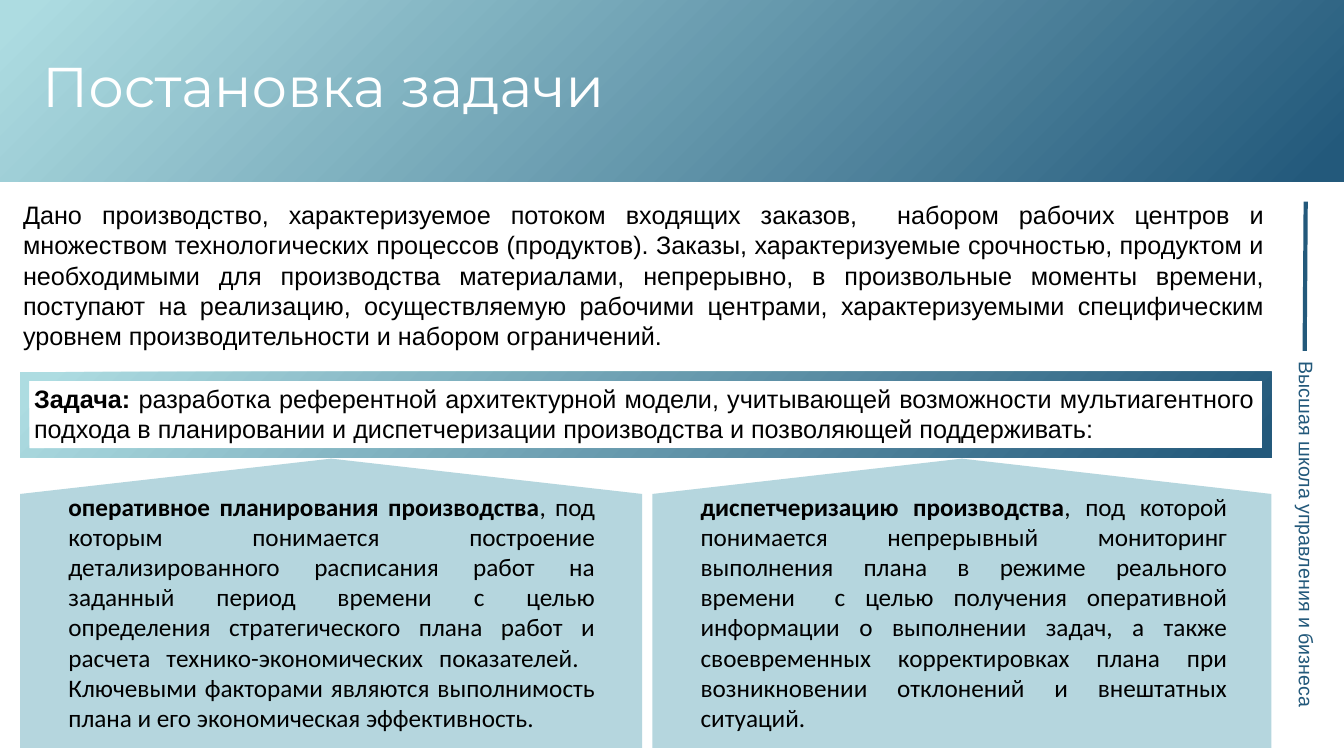
"""Builds the problem statement slide with its two supporting goals."""
from dataclasses import dataclass

from lxml.etree import SubElement
from pptx import Presentation
from pptx.dml.color import RGBColor
from pptx.enum.shapes import MSO_CONNECTOR, MSO_SHAPE
from pptx.enum.text import MSO_ANCHOR, MSO_AUTO_SIZE, PP_ALIGN
from pptx.oxml.ns import qn
from pptx.util import Inches, Pt

TITLE = "Постановка задачи"
SCHOOL = "Высшая школа управления и бизнеса"
GIVEN = (
    "Дано производство, характеризуемое потоком входящих заказов,  набором рабочих центров "
    "и множеством технологических процессов (продуктов). Заказы, характеризуемые срочностью, "
    "продуктом и необходимыми для производства материалами, непрерывно, в произвольные моменты "
    "времени, поступают на реализацию, осуществляемую рабочими центрами, характеризуемыми "
    "специфическим уровнем производительности и набором ограничений."
)
TASK = (
    "Задача: ",
    "разработка референтной архитектурной модели, учитывающей возможности мультиагентного "
    "подхода в планировании и диспетчеризации производства и позволяющей поддерживать:",
)
GOALS = [
    {
        "panel": (0.2, 6.17),
        "text_left": 0.58,
        "lead": "оперативное планирования производства",
        "body": ", под которым понимается построение детализированного расписания работ на "
        "заданный период времени с целью определения стратегического плана работ и расчета "
        "технико-экономических показателей.  Ключевыми факторами являются выполнимость плана "
        "и его экономическая эффективность.",
    },
    {
        "panel": (6.47, 6.14),
        "text_left": 6.85,
        "lead": "диспетчеризацию производства",
        "body": ", под которой понимается непрерывный мониторинг выполнения плана в режиме "
        "реального времени  с целью получения оперативной информации о выполнении задач, а "
        "также своевременных корректировках плана при возникновении отклонений и внештатных "
        "ситуаций.",
    },
]
PANEL_TOP, PANEL_HEIGHT = 4.55, 2.87
GOAL_TEXT_TOP, GOAL_TEXT_WIDTH, GOAL_TEXT_HEIGHT = 4.82, 5.42, 2.52


@dataclass(frozen=True)
class Theme:
    dark: RGBColor = RGBColor.from_string("23597B")
    light: RGBColor = RGBColor.from_string("ADDCE1")
    panel: RGBColor = RGBColor.from_string("96C6D0")
    white: RGBColor = RGBColor.from_string("FFFFFF")
    black: RGBColor = RGBColor.from_string("000000")
    panel_alpha: int = 70
    title_size: int = 40
    body_size: int = 18
    school_size: int = 14
    rule_width: int = 3


THEME = Theme()
TITLE_FONT = {"name": "Montserrat", "size": Pt(THEME.title_size), "color": THEME.white}
BODY_FONT = {"name": "Arial", "size": Pt(THEME.body_size), "color": THEME.black}
GOAL_FONT = BODY_FONT | {"name": "Calibri"}
SCHOOL_FONT = {"name": "Arial", "size": Pt(THEME.school_size), "color": THEME.dark}


def add_plain_shape(slide, preset, box):
    shape = slide.shapes.add_shape(preset, *map(Inches, box))
    shape.shadow.inherit = False
    shape.line.fill.background()
    return shape


def fill_solid(shape, color, alpha=100):
    shape.fill.solid()
    shape.fill.fore_color.rgb = color
    if alpha < 100:
        color_node = shape.fill._xPr.find(qn("a:solidFill"))[0]
        SubElement(color_node, qn("a:alpha"), val=str(alpha * 1000))


def fill_diagonal(shape):
    shape.fill.gradient()
    shape.fill.gradient_angle = 315
    stops = [(0.02, THEME.light), (0.98, THEME.dark)]
    for stop, (position, color) in zip(shape.fill.gradient_stops, stops):
        stop.position = position
        stop.color.rgb = color


def write(shape, runs, font, align):
    frame = shape.text_frame
    frame.word_wrap = True
    paragraph = frame.paragraphs[0]
    paragraph.alignment = align
    for text, bold in runs:
        run = paragraph.add_run()
        run.text = text
        for attribute, value in (font | {"bold": bold}).items():
            if attribute == "color":
                run.font.color.rgb = value
            else:
                setattr(run.font, attribute, value)


def add_text(slide, box, runs, font, align=PP_ALIGN.JUSTIFY):
    text_box = slide.shapes.add_textbox(*map(Inches, box))
    write(text_box, runs, font, align)
    text_box.text_frame.auto_size = MSO_AUTO_SIZE.SHAPE_TO_FIT_TEXT


def add_goal_panel(slide, left, width):
    center_x, center_y = left + width / 2, PANEL_TOP + PANEL_HEIGHT / 2
    box = (center_x - PANEL_HEIGHT / 2, center_y - width / 2, PANEL_HEIGHT, width)
    panel = add_plain_shape(slide, MSO_SHAPE.PENTAGON, box)
    panel.rotation = 270
    panel.adjustments[0] = 0.122
    fill_solid(panel, THEME.panel, THEME.panel_alpha)


def add_school_strip(slide):
    ends = map(Inches, (12.95, 2, 12.94, 3.48))
    rule = slide.shapes.add_connector(MSO_CONNECTOR.STRAIGHT, *ends)
    rule.line.color.rgb = THEME.dark
    rule.line.width = Pt(THEME.rule_width)
    SubElement(rule._element.spPr, qn("a:effectLst"))
    label = add_plain_shape(slide, MSO_SHAPE.RECTANGLE, (11.1, 5.18, 3.72, 0.34))
    label.rotation = 90
    fill_solid(label, THEME.white)
    write(label, [(SCHOOL, False)], SCHOOL_FONT, PP_ALIGN.LEFT)
    label.text_frame.vertical_anchor = MSO_ANCHOR.MIDDLE


def main():
    deck = Presentation()
    deck.slide_width, deck.slide_height = Inches(13.33), Inches(7.5)
    slide = deck.slides.add_slide(deck.slide_layouts[6])

    for goal in GOALS:
        add_goal_panel(slide, *goal["panel"])
    header = add_plain_shape(slide, MSO_SHAPE.RECTANGLE, (0, 0, 13.33, 1.8))
    fill_diagonal(header)
    add_school_strip(slide)

    add_text(slide, (0.32, 0.46, 12.57, 0.77), [(TITLE, False)], TITLE_FONT, PP_ALIGN.LEFT)
    add_text(slide, (0.13, 1.93, 12.51, 1.62), [(GIVEN, False)], BODY_FONT)
    add_text(slide, (0.24, 3.75, 12.3, 0.71), zip(TASK, (True, False)), BODY_FONT)
    task_frame = add_plain_shape(slide, MSO_SHAPE.FRAME, (0.2, 3.69, 12.41, 0.85))
    task_frame.adjustments[0] = 0.105
    fill_diagonal(task_frame)

    for goal in GOALS:
        box = (goal["text_left"], GOAL_TEXT_TOP, GOAL_TEXT_WIDTH, GOAL_TEXT_HEIGHT)
        add_text(slide, box, [(goal["lead"], True), (goal["body"], False)], GOAL_FONT)

    deck.save("out.pptx")


if __name__ == "__main__":
    main()
